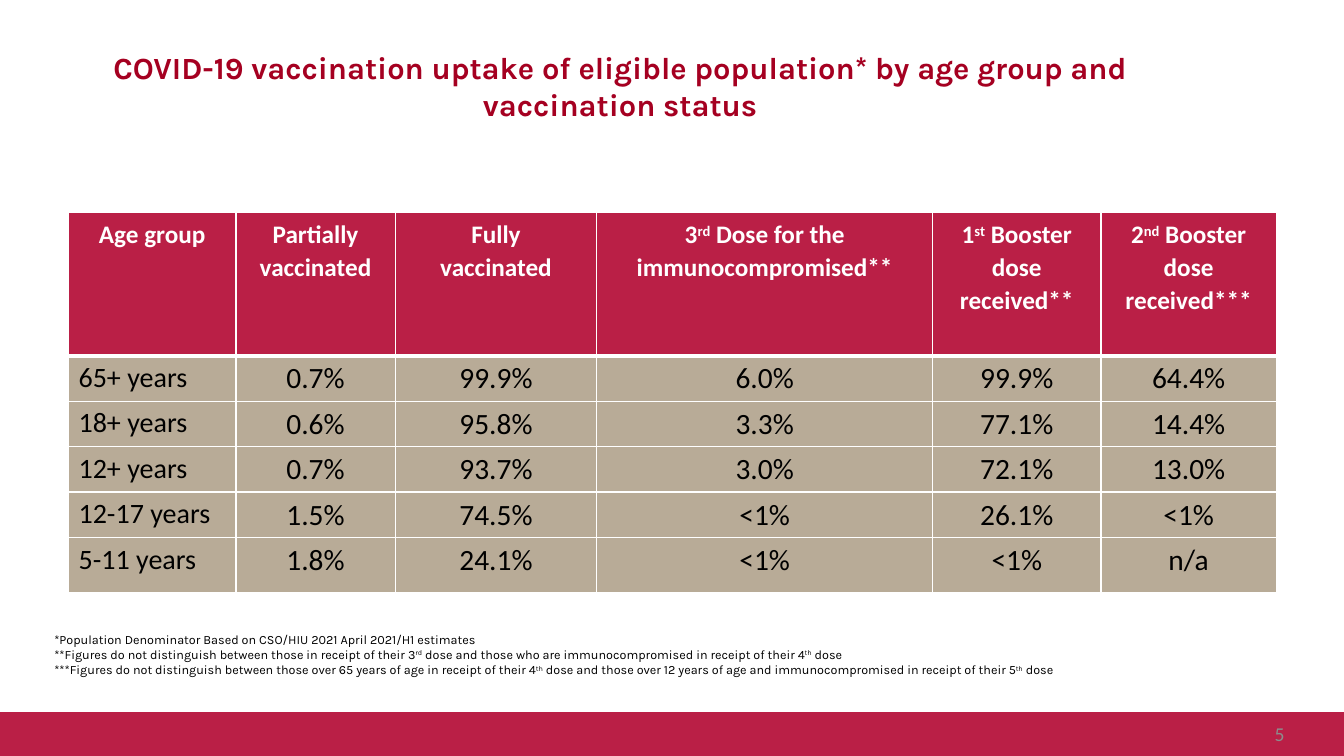
from dataclasses import dataclass

from lxml.etree import SubElement
from pptx import Presentation
from pptx.dml.color import RGBColor
from pptx.enum.shapes import MSO_SHAPE
from pptx.enum.text import MSO_ANCHOR, PP_ALIGN
from pptx.oxml.ns import qn
from pptx.util import Inches, Pt

CRIMSON, SAND, WHITE, BLACK = "BA1F46", "B8AB97", "FFFFFF", "000000"


@dataclass(frozen=True)
class Style:
    font: str
    size: float
    color: str
    bold: bool = False
    align: PP_ALIGN = PP_ALIGN.LEFT
    spacing: float = 1.0


@dataclass(frozen=True)
class TextBlock:
    left: float
    top: float
    width: float
    height: float
    lines: tuple[str, ...]
    style: Style
    anchor: MSO_ANCHOR = MSO_ANCHOR.MIDDLE
    inset_x: float = 0.12
    inset_y: float = 0.06


HEADER = Style("Calibri", 18, WHITE, True, PP_ALIGN.CENTER, 1.07)
AGE = Style("Calibri", 20, BLACK)
VALUE = Style("Calibri", 21, BLACK, align=PP_ALIGN.CENTER)

# Text between carets is superscript
TEXT_BLOCKS = [
    TextBlock(0.44, 0.31, 11.42, 1.08,
              ("COVID-19 vaccination uptake of eligible population* "
               "by age group and vaccination status",),
              Style("Karla", 22, "A50021", True, PP_ALIGN.CENTER)),
    TextBlock(9.75, 7.08, 3.11, 0.4, ("5",),
              Style("Calibri", 14, "8C8C8C", align=PP_ALIGN.RIGHT)),
    TextBlock(0.44, 6.22, 12.58, 0.56,
              ("*Population Denominator Based on CSO/HIU 2021 April 2021/H1 estimates",
               "**Figures do not distinguish between those in receipt of their 3^rd^ dose "
               "and those who are immunocompromised in receipt of their 4^th^ dose",
               "***Figures do not distinguish between those over 65 years of age in receipt "
               "of their 4^th^ dose and those over 12 years of age and immunocompromised "
               "in receipt of their 5^th^ dose"),
              Style("Karla", 9, BLACK), MSO_ANCHOR.TOP, 0.1, 0.05),
]

COLUMN_WIDTHS = [1.66, 1.58, 2, 3.33, 1.67, 1.74]
ROW_HEIGHTS = [1.42, 0.45, 0.45, 0.45, 0.45, 0.55]
HEADINGS = [
    ("Age group",),
    ("Partially vaccinated",),
    ("Fully", "vaccinated"),
    ("3^rd^ Dose for the immunocompromised**",),
    ("1^st^ Booster dose received**",),
    ("2^nd^ Booster dose received***",),
]
UPTAKE = [
    ("65+ years", "0.7%", "99.9%", "6.0%", "99.9%", "64.4%"),
    ("18+ years", "0.6%", "95.8%", "3.3%", "77.1%", "14.4%"),
    ("12+ years", "0.7%", "93.7%", "3.0%", "72.1%", "13.0%"),
    ("12-17 years", "1.5%", "74.5%", "<1%", "26.1%", "<1%"),
    ("5-11 years", "1.8%", "24.1%", "<1%", "<1%", "n/a"),
]


def rgb(value: str) -> RGBColor:
    return RGBColor.from_string(value)


def write_lines(tf, lines: tuple[str, ...], style: Style) -> None:
    for i, line in enumerate(lines):
        p = tf.add_paragraph() if i else tf.paragraphs[0]
        p.alignment = style.align
        p.line_spacing = style.spacing
        for j, part in enumerate(line.split("^")):
            r = p.add_run()
            r.text = part
            r.font.name = style.font
            r.font.size = Pt(style.size)
            r.font.bold = style.bold
            r.font.color.rgb = rgb(style.color)
            if j % 2:
                r.font._element.set("baseline", "30000")


def add_text(slide, block: TextBlock) -> None:
    sp = slide.shapes.add_textbox(Inches(block.left), Inches(block.top),
                                  Inches(block.width), Inches(block.height))
    tf = sp.text_frame
    tf.word_wrap = True
    tf.vertical_anchor = block.anchor
    tf.margin_left = tf.margin_right = Inches(block.inset_x)
    tf.margin_top = tf.margin_bottom = Inches(block.inset_y)
    write_lines(tf, block.lines, block.style)


def set_borders(cell, top: float, bottom: float) -> None:
    tc_pr = cell._tc.get_or_add_tcPr()
    for side, width in (("L", 1), ("R", 1), ("T", top), ("B", bottom)):
        ln = SubElement(tc_pr, qn(f"a:ln{side}"), w=str(Pt(width)))
        fill = SubElement(ln, qn("a:solidFill"))
        SubElement(fill, qn("a:srgbClr"), val=WHITE)


def add_uptake_table(slide) -> None:
    rows = [HEADINGS] + [[(text,) for text in row] for row in UPTAKE]
    frame = slide.shapes.add_table(
        len(rows), len(COLUMN_WIDTHS), Inches(0.68), Inches(2.11),
        Inches(sum(COLUMN_WIDTHS)), Inches(sum(ROW_HEIGHTS)))
    table = frame.table
    table.horz_banding = False
    for column, width in zip(table.columns, COLUMN_WIDTHS):
        column.width = Inches(width)
    for i, (height, row) in enumerate(zip(ROW_HEIGHTS, rows)):
        table.rows[i].height = Inches(height)
        for j, lines in enumerate(row):
            cell = table.cell(i, j)
            set_borders(cell, 3 if i == 1 else 1, 3 if i == 0 else 1)
            cell.fill.solid()
            cell.fill.fore_color.rgb = rgb(SAND if i else CRIMSON)
            style = HEADER if i == 0 else AGE if j == 0 else VALUE
            write_lines(cell.text_frame, lines, style)


def add_footer_band(slide) -> None:
    sp = slide.shapes.add_shape(MSO_SHAPE.RECTANGLE, Inches(0), Inches(7.08),
                                Inches(13.33), Inches(0.42))
    sp.shadow.inherit = False
    sp.fill.solid()
    sp.fill.fore_color.rgb = rgb(CRIMSON)
    sp.line.color.rgb = rgb(CRIMSON)
    sp.line.width = Pt(2)


def main() -> None:
    prs = Presentation()
    prs.slide_width, prs.slide_height = Inches(13.33), Inches(7.5)
    slide = prs.slides.add_slide(prs.slide_layouts[6])

    # Footer band, then title, page number and footnotes
    add_footer_band(slide)
    for block in TEXT_BLOCKS:
        add_text(slide, block)

    # Uptake by age group
    add_uptake_table(slide)
    prs.save("out.pptx")


if __name__ == "__main__":
    main()
